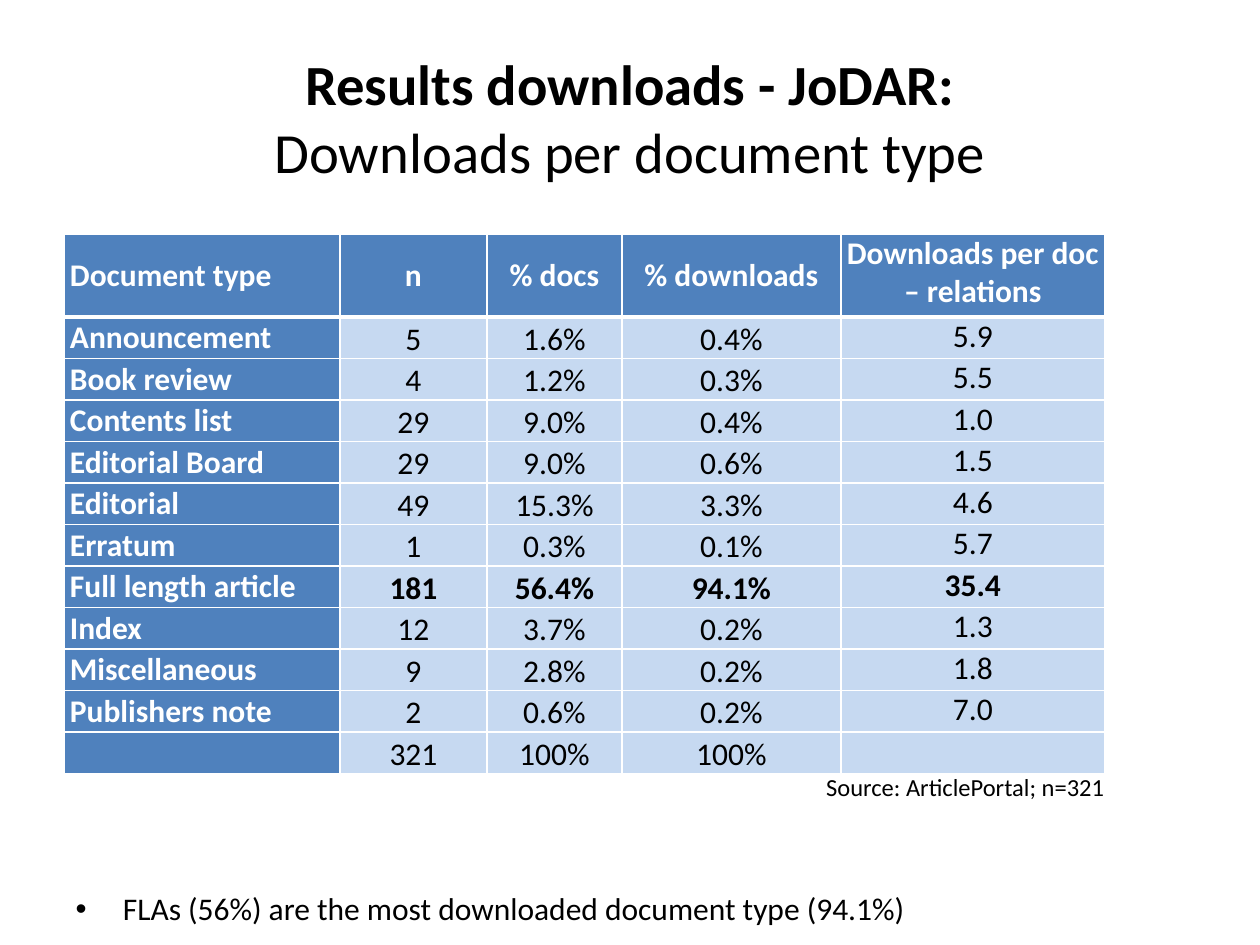
"""Build a slide with a table of downloads per document type."""
import pptx
import pptx.dml.color
import pptx.enum.text
import pptx.oxml
import pptx.oxml.ns
import pptx.util

PX = 914400 // 126
WHITE = pptx.dml.color.RGBColor(0xFF, 0xFF, 0xFF)
BLACK = pptx.dml.color.RGBColor(0x00, 0x00, 0x00)
BLUE = pptx.dml.color.RGBColor(0x4F, 0x81, 0xBD)
PALE_BLUE = pptx.dml.color.RGBColor(0xC6, 0xD9, 0xF1)
ALIGN = pptx.enum.text.PP_ALIGN
ANCHOR = pptx.enum.text.MSO_ANCHOR

TITLE = [("Results downloads - JoDAR:", True), ("Downloads per document type", False)]
HEADER = ("Document type", "n", "% docs", "% downloads", "Downloads per doc – relations")
DOCUMENT_TYPES = [
    ("Announcement", "5", "1.6%", "0.4%", "5.9"),
    ("Book review", "4", "1.2%", "0.3%", "5.5"),
    ("Contents list", "29", "9.0%", "0.4%", "1.0"),
    ("Editorial Board", "29", "9.0%", "0.6%", "1.5"),
    ("Editorial", "49", "15.3%", "3.3%", "4.6"),
    ("Erratum", "1", "0.3%", "0.1%", "5.7"),
    ("Full length article", "181", "56.4%", "94.1%", "35.4"),
    ("Index", "12", "3.7%", "0.2%", "1.3"),
    ("Miscellaneous", "9", "2.8%", "0.2%", "1.8"),
    ("Publishers note", "2", "0.6%", "0.2%", "7.0"),
    ("", "321", "100%", "100%", ""),
]
HIGHLIGHT = "Full length article"
SOURCE = "Source: ArticlePortal; n=321"
FINDING = "FLAs (56%) are the most downloaded document type (94.1%)"

TITLE_BOX = (63, 38, 1134, 157)
FINDING_BOX = (63, 883, 1134, 50)
TABLE_BOX = (64, 234, 1041, 540)
SOURCE_BOX = (77, 766, 1040, 43)
COLUMN_WIDTHS = (276, 147, 135, 219, 264)
HEADER_UNITS = 2
CELL_MARGINS = {"margin_left": 6 * PX, "margin_right": 6 * PX, "margin_top": 0, "margin_bottom": 0}


def emu(box):
    return [length * PX for length in box]


def place(shape, box):
    for side, length in zip(("left", "top", "width", "height"), emu(box)):
        setattr(shape, side, length)


def write(paragraph, text, size, color, bold=False):
    run = paragraph.add_run()
    run.text = text
    font_format = {"name": "Calibri", "size": pptx.util.Pt(size), "bold": bold}
    for key, value in font_format.items():
        setattr(run.font, key, value)
    run.font.color.rgb = color


def add_borders(cell, bottom):
    properties = cell._tc.get_or_add_tcPr()
    for side, width in {"lnL": 1, "lnR": 1, "lnT": 1, "lnB": bottom}.items():
        properties.append(pptx.oxml.parse_xml(
            f'<a:{side} {pptx.oxml.ns.nsdecls("a")} w="{pptx.util.Pt(width)}">'
            f'<a:solidFill><a:srgbClr val="{WHITE}"/></a:solidFill></a:{side}>'))


def fill_cell(cell, text, row, column, highlighted):
    is_heading = row == 0 or column == 0
    if column == len(HEADER) - 1:
        anchor = ANCHOR.TOP
    else:
        anchor = ANCHOR.MIDDLE if is_heading else ANCHOR.BOTTOM
    for key, value in {**CELL_MARGINS, "vertical_anchor": anchor}.items():
        setattr(cell, key, value)
    add_borders(cell, 3 if row == 0 else 1)
    cell.fill.solid()
    cell.fill.fore_color.rgb = BLUE if is_heading else PALE_BLUE
    paragraph = cell.text_frame.paragraphs[0]
    paragraph.alignment = ALIGN.LEFT if column == 0 else ALIGN.CENTER
    if text:
        write(paragraph, text, 18, WHITE if is_heading else BLACK, is_heading or highlighted)


def add_downloads_table(slide):
    rows = [HEADER, *DOCUMENT_TYPES]
    table = slide.shapes.add_table(len(rows), len(HEADER), *emu(TABLE_BOX)).table
    table.first_col = True
    table.horz_banding = False
    for column, width in zip(table.columns, COLUMN_WIDTHS):
        column.width = width * PX
    unit = TABLE_BOX[3] * PX // (HEADER_UNITS + len(DOCUMENT_TYPES))
    for r, values in enumerate(rows):
        table.rows[r].height = unit * (HEADER_UNITS if r == 0 else 1)
        for c, text in enumerate(values):
            fill_cell(table.cell(r, c), text, r, c, values[0] == HIGHLIGHT)


def main():
    presentation = pptx.Presentation()
    presentation.slide_width = 1260 * PX
    presentation.slide_height = 945 * PX
    slide = presentation.slides.add_slide(presentation.slide_layouts[1])

    title = slide.shapes.title
    place(title, TITLE_BOX)
    title.text_frame.vertical_anchor = ANCHOR.MIDDLE
    heading = title.text_frame.paragraphs[0]
    heading.alignment = ALIGN.CENTER
    for index, (text, bold) in enumerate(TITLE):
        if index:
            heading.add_line_break()
        write(heading, text, 32.4, BLACK, bold)

    finding = slide.placeholders[1]
    place(finding, FINDING_BOX)
    bullet = finding.text_frame.paragraphs[0]
    bullet.space_before = pptx.util.Pt(0)
    write(bullet, FINDING, 18, BLACK)

    add_downloads_table(slide)

    source = slide.shapes.add_textbox(*emu(SOURCE_BOX)).text_frame
    source.word_wrap = True
    source.auto_size = pptx.enum.text.MSO_AUTO_SIZE.SHAPE_TO_FIT_TEXT
    source.paragraphs[0].alignment = ALIGN.RIGHT
    write(source.paragraphs[0], SOURCE, 14, BLACK)

    presentation.save("out.pptx")


if __name__ == "__main__":
    main()
